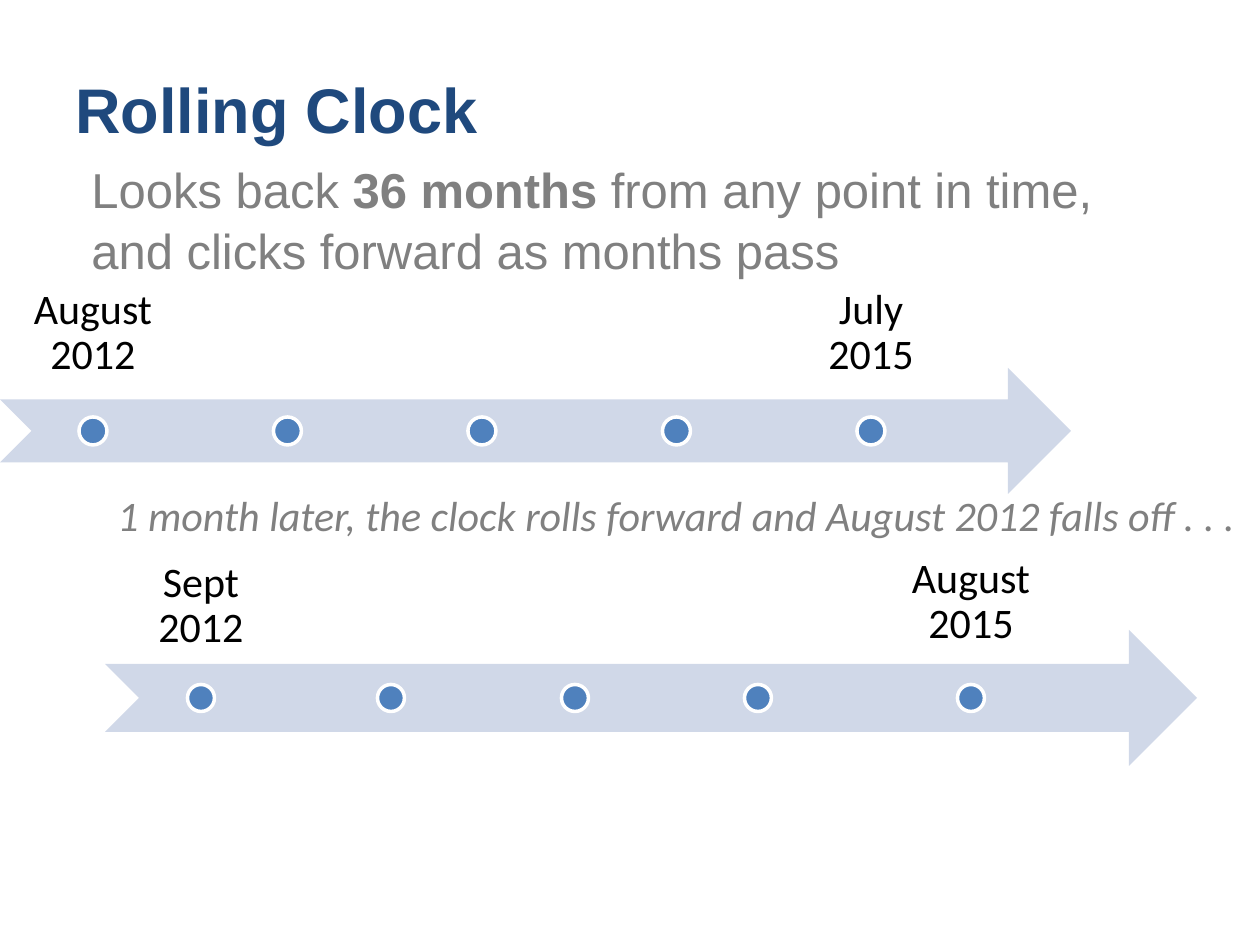
import pptx
import pptx.dml.color
import pptx.enum.shapes
import pptx.enum.text
import pptx.util
from dataclasses import dataclass

SHAPE = pptx.enum.shapes.MSO_SHAPE
ALIGN = pptx.enum.text.PP_ALIGN
ANCHOR = pptx.enum.text.MSO_ANCHOR


@dataclass(frozen=True)
class Theme:
    """Colours, fonts and type sizes of the slide."""
    navy: str = "1F497D"
    grey: str = "808080"
    black: str = "000000"
    white: str = "FFFFFF"
    band: str = "D0D8E8"
    dot: str = "4F81BD"
    heading_font: str = "Arial"
    label_font: str = "Calibri"
    title_size: int = 36
    body_size: int = 28
    label_size: int = 24


THEME = Theme()


def px(n):
    """Turn pixels at 126 to the inch into EMU."""
    return pptx.util.Emu(round(n * 914400 / 126))


def rgb(value):
    """Turn a hex string into a colour."""
    return pptx.dml.color.RGBColor.from_string(value)


def add_text(shapes, box, runs, *, font, size, color, bold=False, italic=False,
             align=ALIGN.LEFT, anchor=ANCHOR.TOP, inset=None, spacing=None, wrap=True):
    """Add a text box; runs is a string or a list of (text, bold) pairs."""
    sp = shapes.add_textbox(*map(px, box))
    tf = sp.text_frame
    tf.word_wrap = wrap
    tf.vertical_anchor = anchor
    if inset is not None:
        tf.margin_left = tf.margin_right = tf.margin_top = tf.margin_bottom = px(inset)
    p = tf.paragraphs[0]
    p.alignment = align
    if spacing:
        p.line_spacing = spacing
    for text, strong in [(runs, bold)] if isinstance(runs, str) else runs:
        r = p.add_run()
        r.text = text
        r.font.name, r.font.size = font, pptx.util.Pt(size)
        r.font.bold, r.font.italic = strong, italic
        r.font.color.rgb = rgb(color)
    return sp


def add_solid(shapes, kind, box, fill, line=None):
    """Add a filled preset shape with an optional outline colour."""
    sp = shapes.add_shape(kind, *map(px, box))
    sp.shadow.inherit = False
    sp.fill.solid()
    sp.fill.fore_color.rgb = rgb(fill)
    if line:
        sp.line.color.rgb = rgb(line)
        sp.line.width = pptx.util.Pt(2)
    else:
        sp.line.fill.background()
    return sp


def add_heading(slide, box):
    """Place the title and the sentence below it."""
    x, y, w, h = box
    add_text(slide.shapes, (x, y, w, 141), "Rolling Clock", font=THEME.heading_font,
             size=THEME.title_size, color=THEME.navy, bold=True, anchor=ANCHOR.MIDDLE)
    add_text(slide.shapes, (x + 16, y + 112, w - 16, h - 112),
             [("Looks back ", False), ("36 months ", True),
              ("from any point in time, and clicks forward as months pass", False)],
             font=THEME.heading_font, size=THEME.body_size, color=THEME.grey, spacing=1.05)


def add_timeline(slide, box, dots, dot_size, labels, label_drop):
    """Place an arrow, its dots and a label over the first and last dot."""
    x, y, w, h = box
    shapes = slide.shapes.add_group_shape().shapes
    add_solid(shapes, SHAPE.NOTCHED_RIGHT_ARROW, box, THEME.band)
    for dot in dots:
        add_solid(shapes, SHAPE.OVAL,
                  (x + dot - dot_size / 2, y + (h - dot_size) / 2, dot_size, dot_size),
                  THEME.dot, THEME.white)
    for dot, (text, width, inset) in zip((dots[0], dots[-1]), labels):
        height = 108
        add_text(shapes, (x + dot - width / 2, y + label_drop - height, width, height), text,
                 font=THEME.label_font, size=THEME.label_size, color=THEME.black,
                 align=ALIGN.CENTER, anchor=ANCHOR.BOTTOM, inset=inset, spacing=0.9)


def add_caption(slide, box):
    """Place the remark between the two timelines."""
    add_text(slide.shapes, box,
             "1 month later, the clock rolls forward and August 2012 falls off . . .",
             font=THEME.label_font, size=THEME.label_size, color=THEME.grey,
             italic=True, wrap=False)


def main():
    """Build the slide and save it."""
    prs = pptx.Presentation()
    prs.slide_width, prs.slide_height = px(1260), px(945)
    slide = prs.slides.add_slide(prs.slide_layouts[6])
    add_heading(slide, (63, 38, 1134, 250))
    add_timeline(slide, (0, 368, 1071, 126), [93 + 194.5 * i for i in range(5)], 28,
                 [("August 2012", 185, 24), ("July 2015", 185, 24)], 35)
    add_timeline(slide, (105, 630, 1092, 136), [96, 286, 470, 653, 866], 27,
                 [("Sept 2012", 190, 20), ("August 2015", 234, 24)], 42)
    add_caption(slide, (105, 483, 1164, 63))
    prs.save("out.pptx")


if __name__ == "__main__":
    main()
